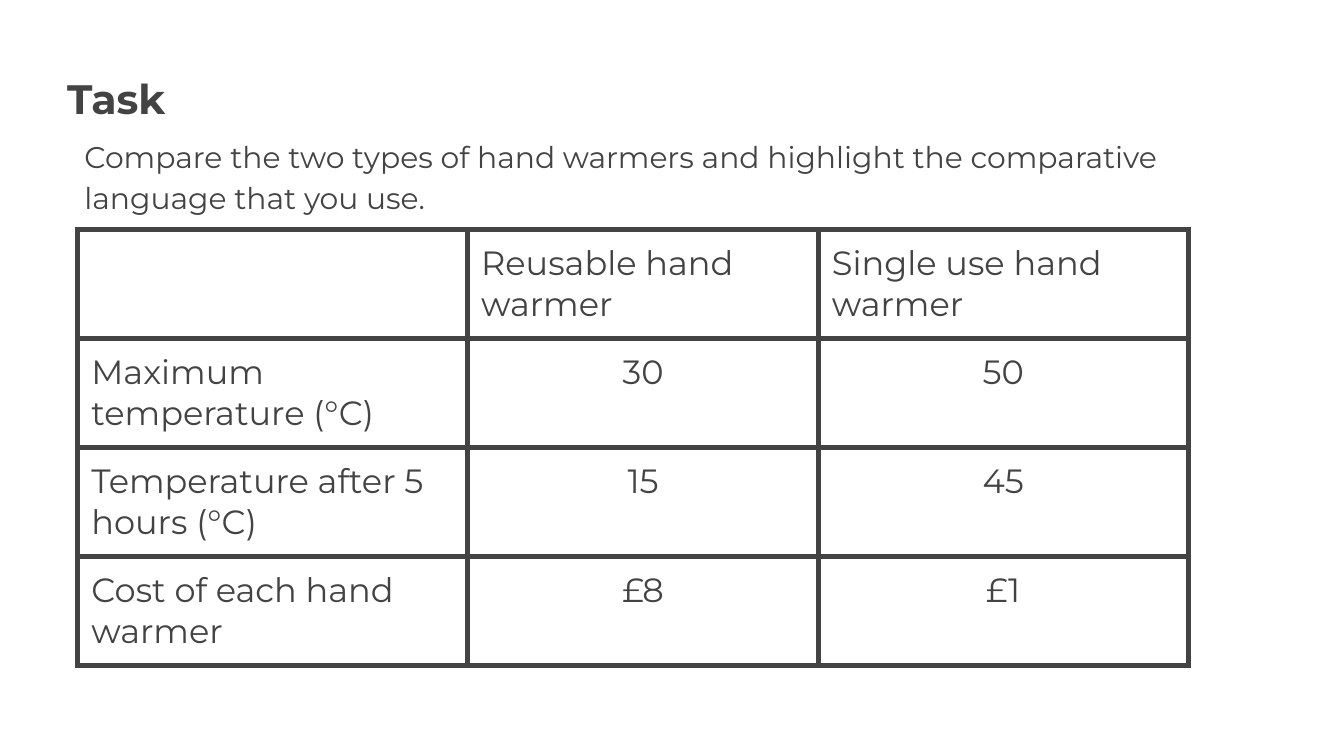
from lxml import etree
from pptx import Presentation
from pptx import util as u
from pptx.dml.color import RGBColor
from pptx.enum import text
from pptx.oxml.ns import qn

COLORS = {"ink": "434343", "paper": "FFFFFF"}
FONT = "Montserrat"
WIDTH = 10
HEIGHT = WIDTH * 9 / 16
SIDES = ("left", "top", "right", "bottom")
ROWS = [
    ("", "Reusable hand warmer", "Single use hand warmer"),
    ("Maximum temperature (°C)", "30", "50"),
    ("Temperature after 5 hours (°C)", "15", "45"),
    ("Cost of each hand warmer", "£8", "£1"),
]


def inches(box):
    """Turn a box in inches into lengths."""
    return [u.Inches(v) for v in box]


def write(tf, words, size, inset=0.1, bold=False, **paragraph):
    """Put one formatted paragraph in a text frame."""
    frame = {f"margin_{side}": u.Inches(inset) for side in SIDES}
    frame.update(word_wrap=True, vertical_anchor=text.MSO_ANCHOR.TOP)
    p = tf.paragraphs[0]
    r = p.add_run()
    r.text = words
    font = {"name": FONT, "size": u.Pt(size), "bold": bold}
    for target, values in ((tf, frame), (p, paragraph), (r.font, font)):
        for name, value in values.items():
            setattr(target, name, value)
    r.font.color.rgb = RGBColor.from_string(COLORS["ink"])


def add_title(s, box, words):
    """Place the title in its placeholder."""
    sp = s.shapes.title
    sp.left, sp.top, sp.width, sp.height = inches(box)
    write(sp.text_frame, words, 22, inset=0, bold=True,
          line_spacing=1.15, alignment=text.PP_ALIGN.LEFT)
    sp.text_frame.auto_size = text.MSO_AUTO_SIZE.NONE


def add_instruction(s, box, words):
    """Place the task instruction."""
    sp = s.shapes.add_textbox(*inches(box))
    write(sp.text_frame, words, 16, line_spacing=1.15)
    sp.text_frame.auto_size = text.MSO_AUTO_SIZE.SHAPE_TO_FIT_TEXT


def border(cell, points):
    """Draw all four borders of a cell."""
    pr = cell._tc.get_or_add_tcPr()
    for i, side in enumerate(("lnL", "lnR", "lnT", "lnB")):
        ln = etree.Element(qn(f"a:{side}"), w=str(u.Pt(points)))
        fill = etree.SubElement(ln, qn("a:solidFill"))
        etree.SubElement(fill, qn("a:srgbClr"), val=COLORS["ink"])
        pr.insert(i, ln)


def add_comparison(s, box, weights, rows):
    """Fill the box with a table whose columns share it by weight."""
    table = s.shapes.add_table(len(rows), len(weights), *inches(box)).table
    table.first_row = table.horz_banding = False
    for column, weight in zip(table.columns, weights):
        column.width = u.Inches(box[2] * weight / sum(weights))
    for i, row in enumerate(rows):
        for j, words in enumerate(row):
            cell = table.cell(i, j)
            cell.fill.solid()
            cell.fill.fore_color.rgb = RGBColor.from_string(COLORS["paper"])
            border(cell, 3)
            for side in SIDES:
                setattr(cell, f"margin_{side}", u.Inches(0.1))
            if words:
                centred = i > 0 and j > 0
                align = text.PP_ALIGN.CENTER if centred else text.PP_ALIGN.LEFT
                write(cell.text_frame, words, 18, alignment=align)


def main():
    """Build and save the task slide."""
    prs = Presentation()
    prs.slide_width, prs.slide_height = inches((WIDTH, HEIGHT))
    s = prs.slides.add_slide(prs.slide_layouts[5])
    add_title(s, (0.5, 0.49, 8.61, 0.41), "Task")
    add_comparison(s, (0.58, 1.71, 8.26, 3.24), (2.9, 2.61, 2.75), ROWS)
    add_instruction(s, (0.53, 0.89, 8.97, 0.78),
                    "Compare the two types of hand warmers and highlight "
                    "the comparative language that you use.")
    prs.save("out.pptx")


if __name__ == "__main__":
    main()
